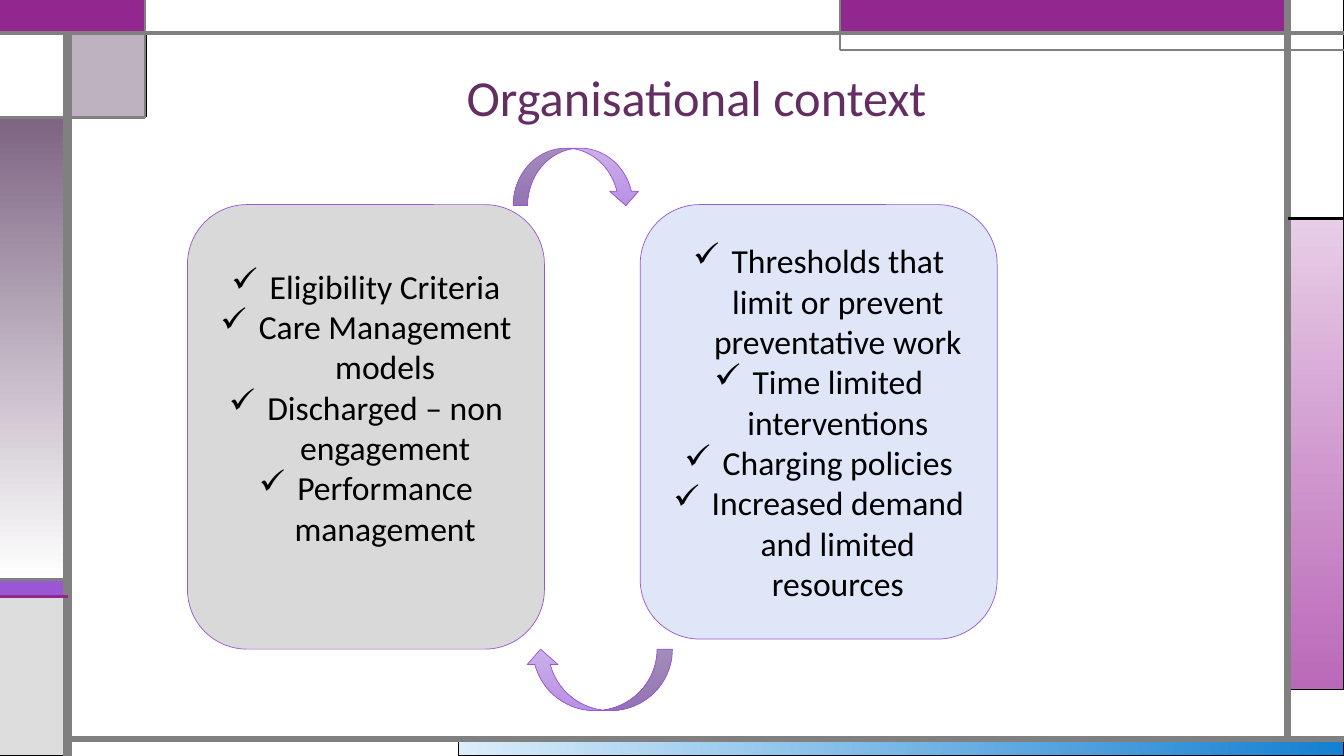
"""Build the "Organisational context" slide with its geometric frame."""
from dataclasses import dataclass

from lxml import etree
from pptx import Presentation
from pptx.dml.color import RGBColor
from pptx.enum.shapes import MSO_CONNECTOR, MSO_SHAPE
from pptx.enum.text import MSO_ANCHOR, PP_ALIGN
from pptx.oxml.ns import qn
from pptx.shapes.autoshape import Shape
from pptx.slide import Slide
from pptx.text.text import TextFrame
from pptx.util import Pt

RECTANGLE = MSO_SHAPE.RECTANGLE
ROUNDED = MSO_SHAPE.ROUNDED_RECTANGLE
ALTERNATE = MSO_SHAPE.FLOWCHART_ALTERNATE_PROCESS
ARROW_DOWN = MSO_SHAPE.CURVED_DOWN_ARROW
ARROW_UP = MSO_SHAPE.CURVED_UP_ARROW
STRAIGHT = MSO_CONNECTOR.STRAIGHT
CENTER = PP_ALIGN.CENTER
MIDDLE = MSO_ANCHOR.MIDDLE
BOTTOM = MSO_ANCHOR.BOTTOM
EMU_PER_PX = 9144
WIDTH, HEIGHT = 1333, 750
LEFT_RAIL, RIGHT_RAIL, TOP_RAIL, BOTTOM_RAIL = 67, 1277, 33, 733
CORNER_X, HEADER_X, CORNER_Y = 144, 833, 117
STRIPE_Y, STRIPE_END, SIDE_Y = 575, 592, 217


@dataclass(frozen=True)
class Theme:
    """Colours, font and type sizes of the slide."""

    font: str = "Calibri"
    title_size: int = 36
    body_size: int = 24
    title: str = "632E62"
    black: str = "000000"
    white: str = "FFFFFF"
    grey: str = "808080"
    pale_grey: str = "DDDDDD"
    magenta: str = "92278F"
    violet: str = "9B57D3"
    indigo: str = "755DD9"
    mauve: str = "7E6583"
    left_card: str = "D9D9D9"
    right_card: str = "DEE6F8"
    sky: tuple[str, str] = ("DAEDFB", "1480D1")
    pink: tuple[str, str] = ("E8CDE7", "BA69B8")
    fade: tuple[str, str] = ("7E6583", "FFFFFF")
    lilac: tuple[str, str] = ("CBAFE8", "B991E3")


THEME = Theme()


@dataclass(frozen=True)
class Block:
    """A filled preset shape; two fill colours make a gradient."""

    left: int
    top: int
    width: int
    height: int
    fill: str | tuple[str, str]
    line: str = THEME.black
    line_width: float = 0.75
    angle: int = 270
    opacity: int = 100
    kind: MSO_SHAPE = RECTANGLE
    flipped: bool = False


@dataclass(frozen=True)
class Rule:
    """A straight line of the frame."""

    start: tuple[int, int]
    end: tuple[int, int]
    width: float
    color: str = THEME.grey


@dataclass(frozen=True)
class Card:
    """A block with a ticked list."""

    block: Block
    items: tuple[str, ...]
    bottom_inset: int = 5


FRAME_BLOCKS = (
    Block(455, BOTTOM_RAIL, 878, 17, THEME.sky, angle=0),
    Block(RIGHT_RAIL, SIDE_Y, 56, 467, THEME.pink),
    Block(0, STRIPE_Y, LEFT_RAIL, 17, THEME.violet),
    Block(0, STRIPE_END, LEFT_RAIL, 158, THEME.pale_grey),
    Block(RIGHT_RAIL, 0, 56, SIDE_Y, THEME.white),
    Block(HEADER_X, 0, 444, TOP_RAIL, THEME.magenta, THEME.indigo),
    Block(LEFT_RAIL, TOP_RAIL, 78, 83, THEME.mauve, opacity=50),
    Block(0, CORNER_Y, LEFT_RAIL, 458, THEME.fade),
    Block(0, TOP_RAIL, LEFT_RAIL, 83, THEME.white),
    Block(0, 0, CORNER_X, TOP_RAIL, THEME.magenta, THEME.magenta, 1.5),
    Block(CORNER_X, 0, 689, TOP_RAIL, THEME.white, THEME.grey),
)
FRAME_RULES = (
    Rule((LEFT_RAIL, HEIGHT), (LEFT_RAIL, TOP_RAIL), 6),
    Rule((LEFT_RAIL, BOTTOM_RAIL), (WIDTH, BOTTOM_RAIL), 4.5),
    Rule((RIGHT_RAIL, BOTTOM_RAIL), (RIGHT_RAIL, 0), 4.5),
    Rule((0, TOP_RAIL), (WIDTH, TOP_RAIL), 3),
    Rule((WIDTH, 50), (HEADER_X, 50), 1.5),
    Rule((HEADER_X, 50), (HEADER_X, 0), 1.5),
    Rule((RIGHT_RAIL, SIDE_Y), (WIDTH, SIDE_Y), 2.25, THEME.black),
    Rule((CORNER_X, 0), (CORNER_X, CORNER_Y), 1.5),
    Rule((CORNER_X, CORNER_Y), (0, CORNER_Y), 2.25),
    Rule((LEFT_RAIL, STRIPE_Y), (0, STRIPE_Y), 2.25),
    Rule((LEFT_RAIL, STRIPE_END), (0, STRIPE_END), 2.25, THEME.magenta),
)
CARDS = (
    Card(
        Block(186, 203, 354, 441, THEME.left_card, THEME.violet, 0.5, kind=ALTERNATE),
        ("Eligibility Criteria", "Care Management models",
         "Discharged – non engagement", "Performance management"),
        bottom_inset=45,
    ),
    Card(
        Block(635, 203, 354, 431, THEME.right_card, THEME.violet, 0.5, kind=ROUNDED),
        ("Thresholds that limit or prevent preventative work",
         "Time limited interventions", "Charging policies",
         "Increased demand and limited resources"),
    ),
)
ARROWS = (
    Block(509, 147, 126, 57, THEME.lilac, THEME.violet, 0.5, kind=ARROW_DOWN),
    Block(521, 644, 146, 61, THEME.lilac, THEME.violet, 0.5, kind=ARROW_UP, flipped=True),
)


def px(length: int) -> int:
    """Turn px into EMU."""
    return length * EMU_PER_PX


def add_block(slide: Slide, block: Block) -> Shape:
    """Draw one filled shape."""
    shape = slide.shapes.add_shape(
        block.kind, px(block.left), px(block.top), px(block.width), px(block.height)
    )
    shape.shadow.inherit = False
    if isinstance(block.fill, tuple):
        shape.fill.gradient()
        shape.fill.gradient_angle = block.angle
        for stop, color in zip(shape.fill.gradient_stops, block.fill):
            stop.color.rgb = RGBColor.from_string(color)
    else:
        shape.fill.solid()
        shape.fill.fore_color.rgb = RGBColor.from_string(block.fill)
    if block.opacity < 100:
        color_element = shape.element.spPr.find(f"{qn('a:solidFill')}/{qn('a:srgbClr')}")
        etree.SubElement(color_element, qn("a:alpha"), val=str(block.opacity * 1000))
    if block.flipped:
        shape.element.spPr.find(qn("a:xfrm")).set("flipH", "1")
    shape.line.color.rgb = RGBColor.from_string(block.line)
    shape.line.width = Pt(block.line_width)
    return shape


def add_rule(slide: Slide, rule: Rule) -> None:
    """Draw one frame line."""
    connector = slide.shapes.add_connector(
        STRAIGHT, *(px(value) for value in rule.start + rule.end)
    )
    connector.line.color.rgb = RGBColor.from_string(rule.color)
    connector.line.width = Pt(rule.width)
    etree.SubElement(connector.element.spPr, qn("a:effectLst"))


def format_text(text_frame: TextFrame, size: int, color: str) -> None:
    """Centre all paragraphs and set their font."""
    text_frame.word_wrap = True
    for paragraph in text_frame.paragraphs:
        paragraph.alignment = CENTER
        for run in paragraph.runs:
            run.font.name = THEME.font
            run.font.size = Pt(size)
            run.font.color.rgb = RGBColor.from_string(color)


def add_title(slide: Slide, text: str) -> None:
    """Write the slide title."""
    text_frame = slide.shapes.add_textbox(px(166), px(58), px(1050), px(73)).text_frame
    text_frame.text = text
    text_frame.vertical_anchor = BOTTOM
    text_frame.paragraphs[0].line_spacing = 0.9
    format_text(text_frame, THEME.title_size, THEME.title)


def add_card(slide: Slide, card: Card) -> None:
    """Draw a card with its ticked list."""
    text_frame = add_block(slide, card.block).text_frame
    text_frame.text = "\n".join(card.items)
    text_frame.vertical_anchor = MIDDLE
    text_frame.margin_bottom = px(card.bottom_inset)
    format_text(text_frame, THEME.body_size, THEME.black)
    for paragraph in text_frame.paragraphs:
        properties = paragraph._p.get_or_add_pPr()
        properties.set("marL", str(px(38)))
        properties.set("indent", str(px(-38)))
        etree.SubElement(properties, qn("a:buChar"), char="✓")


def main() -> None:
    """Build and save the presentation."""
    presentation = Presentation()
    presentation.slide_width, presentation.slide_height = px(WIDTH), px(HEIGHT)
    slide = presentation.slides.add_slide(presentation.slide_layouts[6])
    for block in FRAME_BLOCKS:
        add_block(slide, block)
    for rule in FRAME_RULES:
        add_rule(slide, rule)
    add_title(slide, "Organisational context")
    for card, arrow in zip(CARDS, ARROWS):
        add_card(slide, card)
        add_block(slide, arrow)
    presentation.save("out.pptx")


if __name__ == "__main__":
    main()
